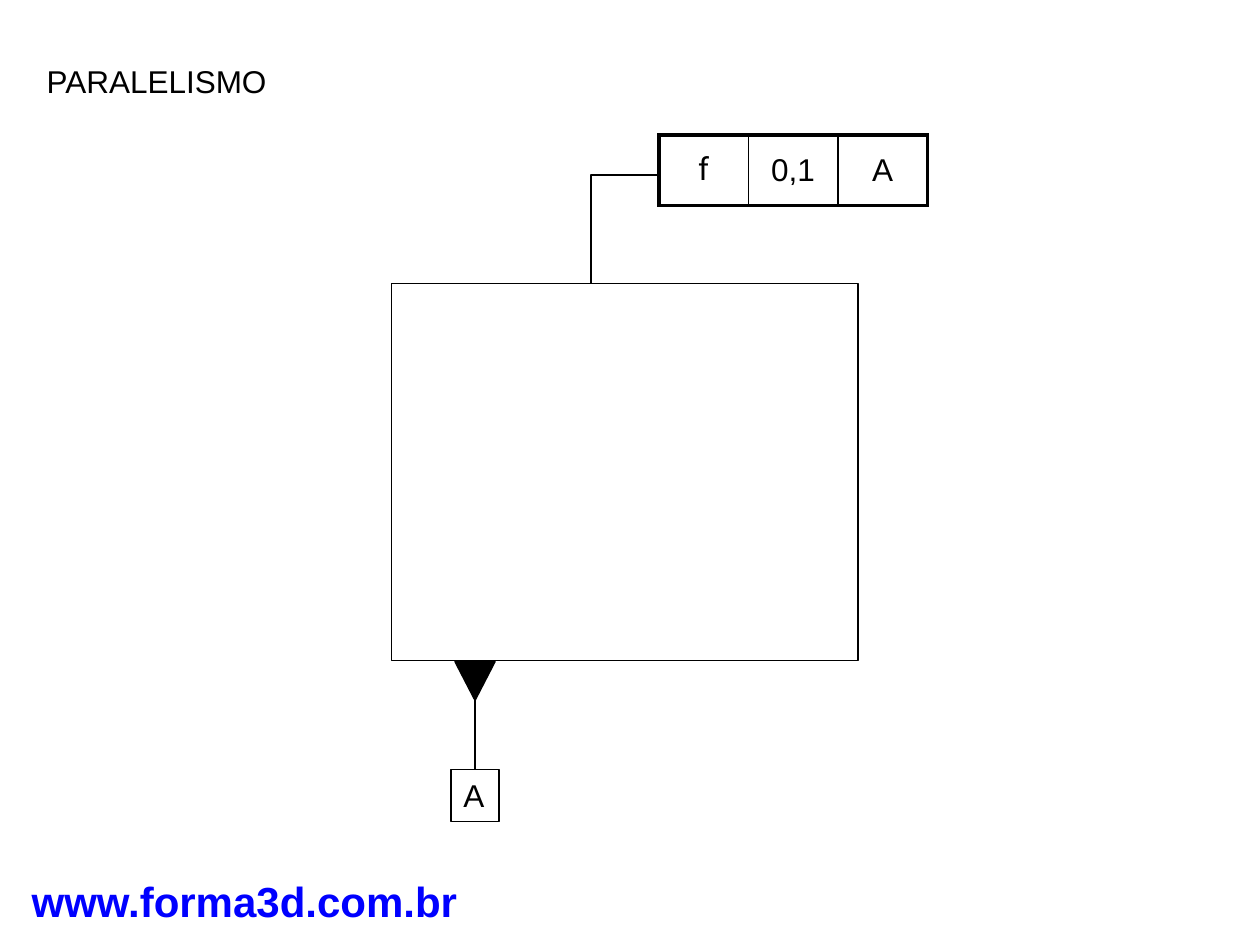
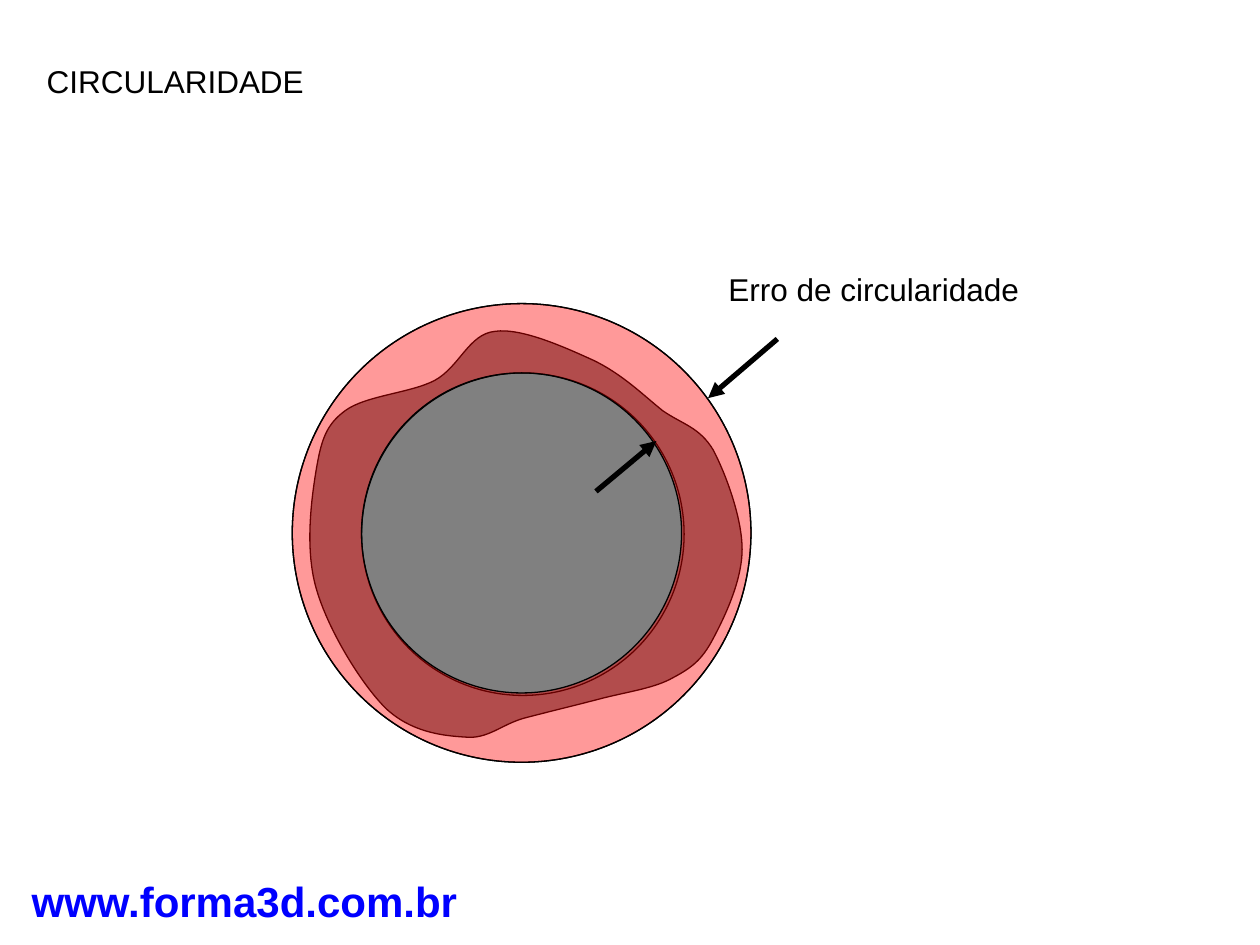
"""Build two slides on geometric tolerances: parallelism and circularity."""
from lxml import etree
from pptx import Presentation, util as u
from pptx.dml.color import RGBColor
from pptx.enum import shapes, text
from pptx.oxml.ns import qn

PX = 9144
BLACK = RGBColor(0, 0, 0)
WHITE = RGBColor(255, 255, 255)
GRAY = RGBColor(128, 128, 128)
RED = RGBColor(255, 0, 0)
BLUE = RGBColor(0, 0, 255)
LEFT, CENTER = text.PP_ALIGN.LEFT, text.PP_ALIGN.CENTER
FRAME = {"word_wrap": False, "auto_size": text.MSO_AUTO_SIZE.NONE,
         "vertical_anchor": text.MSO_ANCHOR.TOP}
BODY = {"name": "Arial", "size": u.Pt(18), "bold": False}
FOOTER = {"name": "Arial", "size": u.Pt(24), "bold": True}


def write(frame, content, align=LEFT, color=BLACK, font_format=BODY, frame_format=FRAME):
    for name, value in frame_format.items():
        setattr(frame, name, value)
    paragraph = frame.paragraphs[0]
    paragraph.text = content
    paragraph.alignment = align
    for name, value in font_format.items():
        setattr(paragraph.font, name, value)
    paragraph.font.color.rgb = color


def paint(shape, width, fill=None, arrow=False):
    if fill is not None:
        shape.fill.solid()
        shape.fill.fore_color.rgb = fill
    elif hasattr(shape, "fill"):
        shape.fill.background()
    shape.line.color.rgb = BLACK
    shape.line.width = u.Pt(width)
    properties = shape.element.spPr
    if arrow:
        etree.SubElement(properties.find(qn("a:ln")), qn("a:tailEnd"), type="triangle")
    etree.SubElement(properties, qn("a:effectLst"))


presentation = Presentation()
presentation.slide_width, presentation.slide_height = 1000 * PX, 750 * PX

for title, width in (("PARALELISMO", 200), ("CIRCULARIDADE", 230)):
    slide = presentation.slides.add_slide(presentation.slide_layouts[5])
    heading = slide.shapes.title
    position = {"left": 27, "top": 44, "width": width, "height": 40}
    for name, value in position.items():
        setattr(heading, name, value * PX)
    write(heading.text_frame, title)
    footer = slide.shapes.add_textbox(15 * PX, 690 * PX, 358 * PX, 50 * PX)
    write(footer.text_frame, "www.forma3d.com.br", CENTER, BLUE, FOOTER)

parallelism, circularity = presentation.slides

builder = parallelism.shapes.build_freeform(547 * PX, 139 * PX)
builder.add_line_segments([(469 * PX, 139 * PX), (469 * PX, 225 * PX)], close=False)
paint(builder.convert_to_shape(), 1.5)

datum_stem = parallelism.shapes.add_connector(
    shapes.MSO_CONNECTOR.STRAIGHT, 377 * PX, 540 * PX, 377 * PX, 619 * PX)
paint(datum_stem, 1.5)

for kind, left, top, width, height, fill, label, rotation in (
        (shapes.MSO_SHAPE.ISOSCELES_TRIANGLE, 361, 525, 32, 31, BLACK, "", 180),
        (shapes.MSO_SHAPE.RECTANGLE, 358, 611, 38, 41, WHITE, "A", 0),
        (shapes.MSO_SHAPE.RECTANGLE, 311, 225, 370, 299, WHITE, "", 0)):
    shape = parallelism.shapes.add_shape(kind, left * PX, top * PX, width * PX, height * PX)
    shape.rotation = rotation
    paint(shape, 0.75, fill)
    if label:
        write(shape.text_frame, label)

tolerance = parallelism.shapes.add_table(1, 3, 523 * PX, 107 * PX, 213 * PX, 56 * PX).table
tolerance.first_row = tolerance.horz_banding = False
for index, (content, font_name) in enumerate((("f", "Roboto"), ("0,1", "Arial"), ("A", "Arial"))):
    cell = tolerance.cell(0, index)
    cell.vertical_anchor = text.MSO_ANCHOR.MIDDLE
    borders = {"L": 1 if index else 2.25, "R": 2.25 if index == 2 else 1, "T": 2.25, "B": 2.25}
    for side, width in borders.items():
        border = etree.SubElement(cell._tc.get_or_add_tcPr(), qn(f"a:ln{side}"), w=str(u.Pt(width)))
        solid = etree.SubElement(border, qn("a:solidFill"))
        etree.SubElement(solid, qn("a:srgbClr"), val=str(BLACK))
    cell.fill.solid()
    cell.fill.fore_color.rgb = WHITE
    write(cell.text_frame, content, CENTER, font_format={**BODY, "name": font_name}, frame_format={})

profile_curves = (
    ((365, 291), (372, 265), (393, 263)),
    ((414, 260), (449, 276), (471, 286)),
    ((494, 297), (511, 314), (526, 326)),
    ((542, 337), (555, 339), (566, 357)),
    ((576, 376), (589, 411), (589, 436)),
    ((589, 461), (575, 490), (566, 507)),
    ((557, 524), (549, 530), (534, 538)),
    ((520, 546), (499, 549), (479, 554)),
    ((460, 559), (435, 565), (416, 570)),
    ((398, 575), (387, 587), (369, 585)),
    ((351, 584), (326, 581), (306, 562)),
    ((286, 542), (260, 499), (251, 467)),
    ((242, 436), (247, 397), (251, 373)),
    ((255, 349), (259, 337), (274, 326)),
    ((290, 314), (326, 312), (345, 302)))
builder = circularity.shapes.build_freeform(345 * PX, 302 * PX)
builder.add_line_segments([(x * PX, y * PX) for curve in profile_curves for x, y in curve])
profile = builder.convert_to_shape()
paint(profile, 0.75, GRAY)
segments = list(profile.element.spPr.iter(qn("a:lnTo")))
for index in range(0, len(segments), 3):
    first, *others = segments[index:index + 3]
    curve = etree.Element(qn("a:cubicBezTo"))
    first.addprevious(curve)
    for segment in (first, *others):
        curve.append(segment[0])
        segment.getparent().remove(segment)

for kind, left, top, size, fill in (
        (shapes.MSO_SHAPE.OVAL, 287, 296, 256, None),
        (shapes.MSO_SHAPE.OVAL, 232, 241, 364, None),
        (shapes.MSO_SHAPE.DONUT, 232, 241, 364, RED)):
    ring = circularity.shapes.add_shape(kind, left * PX, top * PX, size * PX, size * PX)
    paint(ring, 0.75, fill)
ring.adjustments[0] = 55 / 364
ring_color = ring.element.spPr.find(qn("a:solidFill")).find(qn("a:srgbClr"))
etree.SubElement(ring_color, qn("a:alpha"), val="40000")

for ends in ((473, 390, 521, 350), (617, 269, 562, 316)):
    arrow = circularity.shapes.add_connector(
        shapes.MSO_CONNECTOR.STRAIGHT, *(value * PX for value in ends))
    paint(arrow, 3, arrow=True)

error_label = circularity.shapes.add_textbox(568 * PX, 209 * PX, 251 * PX, 40 * PX)
write(error_label.text_frame, "Erro de circularidade", CENTER)

presentation.save("out.pptx")
